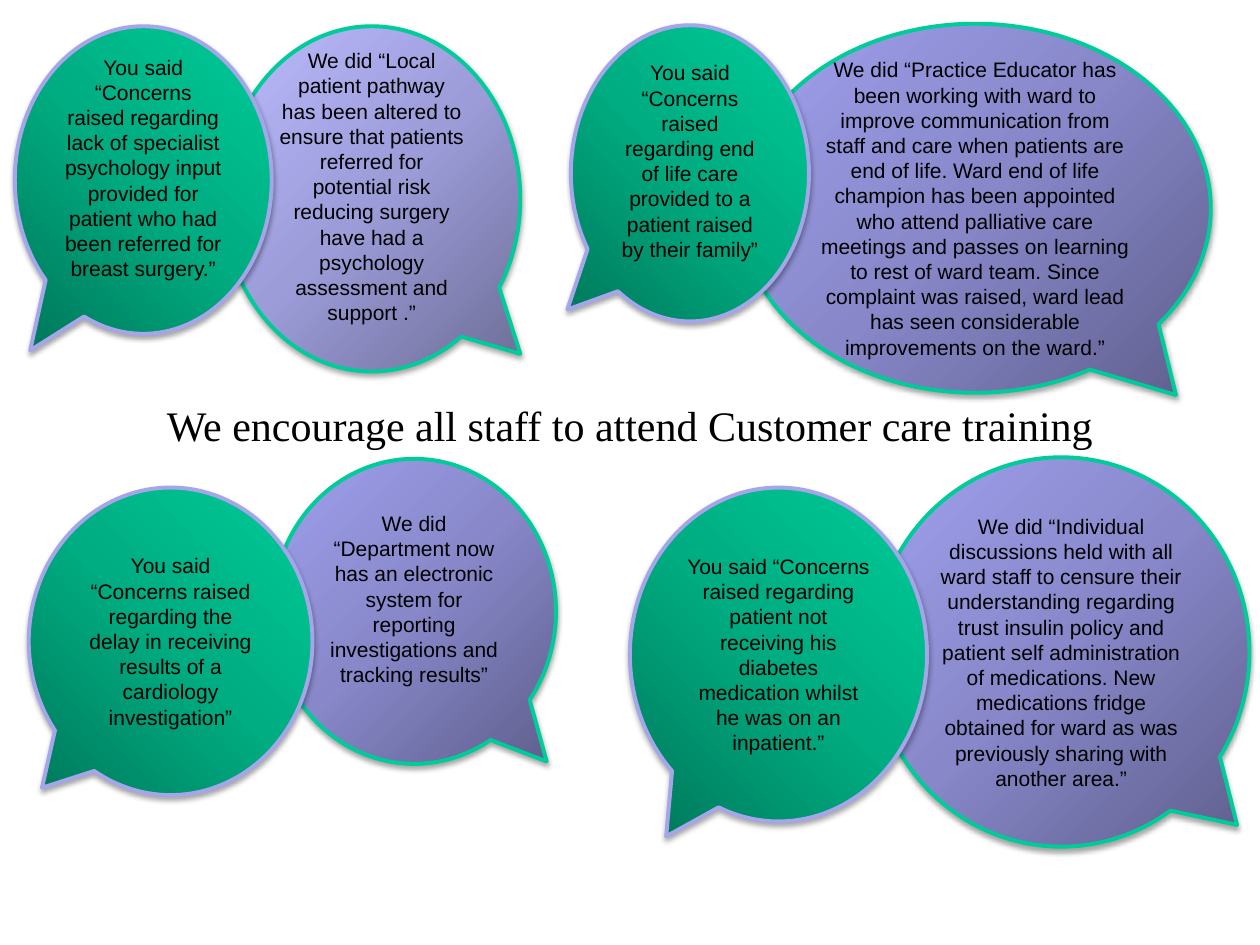
from pptx import Presentation
from pptx import util as u
from pptx.dml.color import RGBColor
from pptx.enum import shapes, text
from pptx.oxml import parse_xml
from pptx.oxml.ns import nsdecls, qn

BLACK = RGBColor(0x00, 0x00, 0x00)
GREEN = RGBColor(0x00, 0xCC, 0x99)
LILAC = RGBColor(0xA5, 0xA5, 0xE9)

# Gradient stops at 0, 50 and 100 %
GREEN_SHADES = (RGBColor(0x00, 0x79, 0x5B), RGBColor(0x00, 0xAC, 0x81), GREEN)
LILAC_SHADES = (RGBColor(0x5F, 0x5F, 0x8D), RGBColor(0x87, 0x87, 0xC9), RGBColor(0xA0, 0xA0, 0xEE))
PALE_SHADES = (RGBColor(0x6E, 0x6E, 0x98), RGBColor(0x9C, 0x9C, 0xD9), RGBColor(0xBB, 0xBB, 0xFF))

INSET = 0.13  # bottom inset of a callout, in cm
RAISED = INSET + 0.5  # lifts the text by half a line

TITLE = "We encourage all staff to attend Customer care training"

# Back to front: position and size in cm, tail tip, bottom inset, wording
WE_DID = [
    ((17.6, 9.22, 7.59, 7.85), (0.467, 0.444), INSET, LILAC_SHADES,
     "We did “Individual discussions held with all ward staff to censure their "
     "understanding regarding trust insulin policy and patient self administration "
     "of medications. New medications fridge obtained for ward as was previously "
     "sharing with another area.”"),
    ((5.49, 9.25, 5.72, 6.15), (0.467, 0.492), RAISED, LILAC_SHADES,
     "We did “Department now has an electronic system for reporting investigations "
     "and tracking results”"),
    ((4.5, 0.53, 5.99, 6.96), (0.5, 0.449), RAISED, PALE_SHADES,
     "We did “Local patient pathway has been altered to ensure that patients referred "
     "for potential risk reducing surgery have had a psychology assessment and support .”"),
    ((14.91, 0.48, 9.5, 7.44), (0.426, 0.506), INSET, LILAC_SHADES,
     "We did “Practice Educator has been working with ward to improve communication "
     "from staff and care when patients are end of life. Ward end of life champion has "
     "been appointed who attend palliative care meetings and passes on learning to rest "
     "of ward team. Since complaint was raised, ward lead has seen considerable "
     "improvements on the ward.”"),
]
YOU_SAID = [
    ((0.58, 9.83, 5.72, 6.2), (-0.453, 0.476), INSET,
     "You said “Concerns raised regarding the delay in receiving results of a "
     "cardiology investigation”"),
    ((12.7, 9.83, 5.99, 6.73), (-0.378, 0.545), INSET,
     "You said “Concerns raised regarding patient not receiving his diabetes "
     "medication whilst he was on an inpatient.”"),
    ((11.51, 0.51, 4.8, 5.97), (-0.515, 0.46), RAISED,
     "You said “Concerns raised regarding end of life care provided to a patient "
     "raised by their family”"),
    ((0.3, 0.53, 5.18, 6.2), (-0.44, 0.554), RAISED,
     "You said “Concerns raised regarding lack of specialist psychology input provided "
     "for patient who had been referred for breast surgery.”"),
]


def write_text(box, content, font="Arial", size=12, color=BLACK, bottom=INSET):
    frame = box.text_frame
    frame.word_wrap = True
    frame.auto_size = text.MSO_AUTO_SIZE.NONE
    frame.vertical_anchor = text.MSO_ANCHOR.MIDDLE
    frame.margin_bottom = u.Cm(bottom)
    para = frame.paragraphs[0]
    para.alignment = text.PP_ALIGN.CENTER
    span = para.add_run()
    span.text = content
    span.font.name = font
    span.font.size = u.Pt(size)
    span.font.color.rgb = color


def fill_radial(shape, shades, from_left):
    """Spread the shades in a circle from a bottom corner."""
    stops = "".join(
        f'<a:gs pos="{place * 50000}"><a:srgbClr val="{shade}"/></a:gs>'
        for place, shade in enumerate(shades))
    corner = 'r="100000"' if from_left else 'l="100000"'
    properties = shape.element.spPr
    properties.find(qn("a:prstGeom")).addnext(parse_xml(
        f'<a:gradFill {nsdecls("a")} rotWithShape="1"><a:gsLst>{stops}</a:gsLst>'
        f'<a:path path="circle"><a:fillToRect t="100000" {corner}/></a:path></a:gradFill>'))


def add_shadow(shape):
    shape.shadow.inherit = False
    shape.element.spPr.find(qn("a:effectLst")).append(parse_xml(
        f'<a:outerShdw {nsdecls("a")} blurRad="{u.Pt(3.1)}" dist="{u.Pt(1.8)}" dir="5400000" '
        'rotWithShape="0"><a:srgbClr val="000000"><a:alpha val="35000"/></a:srgbClr></a:outerShdw>'))


def add_callout(slide, place, tail, bottom, shades, outline, content):
    callout = slide.shapes.add_shape(
        shapes.MSO_SHAPE.OVAL_CALLOUT, *(u.Cm(length) for length in place))
    callout.adjustments[0], callout.adjustments[1] = tail
    fill_radial(callout, shades, from_left=tail[0] < 0)
    callout.line.color.rgb = outline
    callout.line.width = u.Pt(2.25)
    add_shadow(callout)
    write_text(callout, content, bottom=bottom)


def add_title(slide):
    title = slide.shapes.title
    title.left, title.top = u.Cm(1.91), u.Cm(7.92)
    title.width, title.height = u.Cm(21.59), u.Cm(1.27)
    write_text(title, TITLE, font="Times New Roman", size=24)


def main():
    deck = Presentation()
    deck.slide_width, deck.slide_height = u.Cm(25.4), u.Cm(19.05)
    slide = deck.slides.add_slide(deck.slide_layouts[5])
    add_title(slide)

    # Actions behind, concerns in front
    for place, tail, bottom, shades, content in WE_DID:
        add_callout(slide, place, tail, bottom, shades, GREEN, content)
    for place, tail, bottom, content in YOU_SAID:
        add_callout(slide, place, tail, bottom, GREEN_SHADES, LILAC, content)

    deck.save("out.pptx")


if __name__ == "__main__":
    main()
